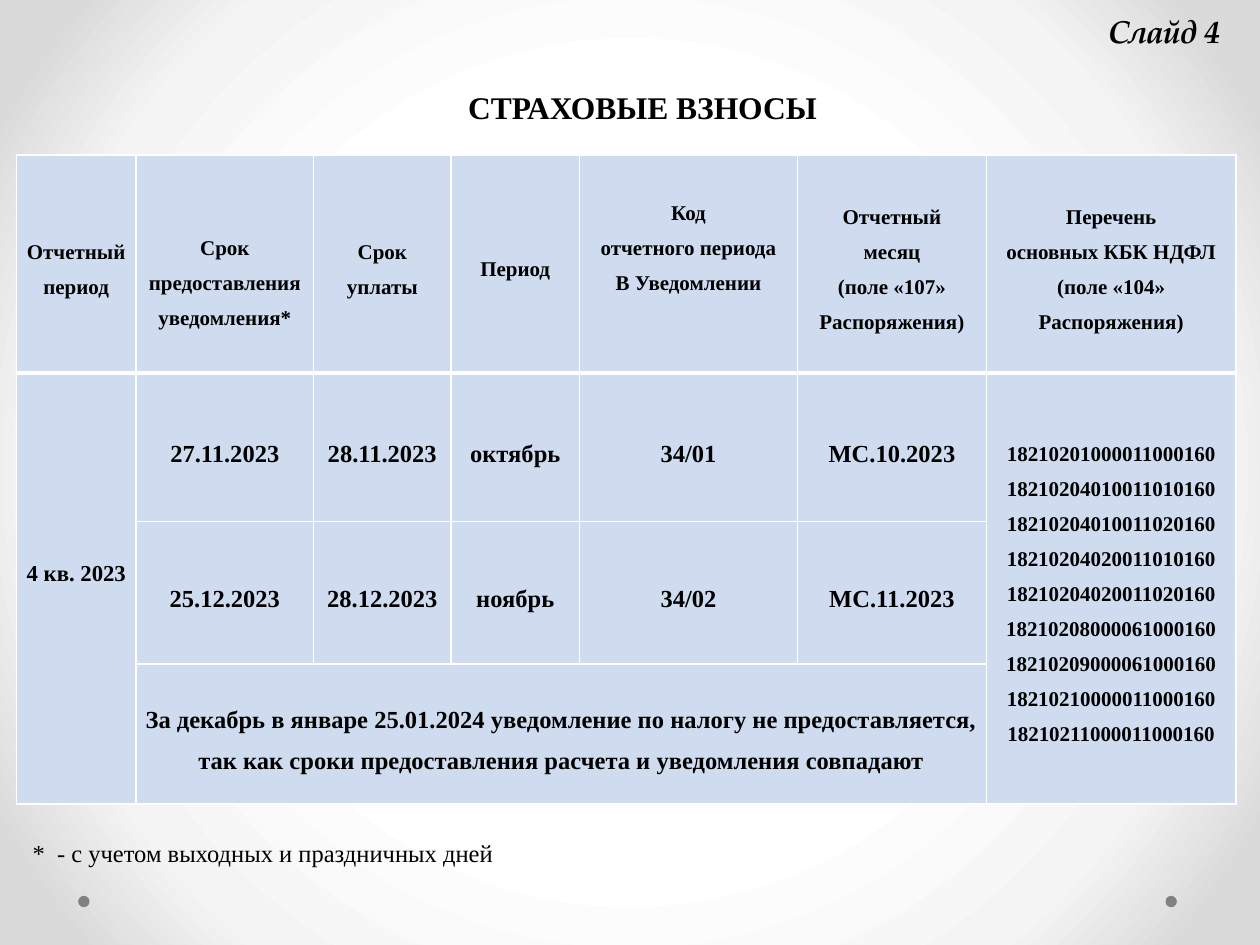
import lxml.etree
import pptx
import pptx.dml.color
import pptx.enum.shapes
import pptx.enum.text
import pptx.oxml
import pptx.oxml.ns
import pptx.util

Inches = pptx.util.Inches
Pt = pptx.util.Pt
RGB = pptx.dml.color.RGBColor
Align = pptx.enum.text.PP_ALIGN
Anchor = pptx.enum.text.MSO_ANCHOR
qn = pptx.oxml.ns.qn

BLACK = RGB(0x00, 0x00, 0x00)
WHITE = RGB(0xFF, 0xFF, 0xFF)
PALE = RGB(0xF4, 0xF4, 0xF4)
SILVER = RGB(0xDA, 0xDA, 0xDA)
GRAY = RGB(0x80, 0x80, 0x80)
BLUE = RGB(0xCF, 0xDC, 0xF0)

SERIF = "Times New Roman"
SCRIPT = "TeX Gyre Pagella"
LINE = 0.28

COLS = [0.95, 1.41, 1.09, 1.02, 1.73, 1.5, 1.98]
ROWS = [1.73, 1.18, 1.13, 1.11]
HEADS = [
    ["Отчетный", "период"],
    ["Срок предоставления уведомления*"],
    ["Срок", "уплаты"],
    ["Период"],
    ["Код", "отчетного периода", "В Уведомлении"],
    ["Отчетный", "месяц", "(поле «107»", "Распоряжения)"],
    ["Перечень", "основных КБК НДФЛ", "(поле «104»", "Распоряжения)"],
]
TOPS = {1: 2 * LINE, 4: LINE}
DATES = [
    ["27.11.2023", "28.11.2023", "октябрь", "34/01", "МС.10.2023"],
    ["25.12.2023", "28.12.2023", "ноябрь", "34/02", "МС.11.2023"],
]
CODES = [
    "18210201000011000160",
    "18210204010011010160",
    "18210204010011020160",
    "18210204020011010160",
    "18210204020011020160",
    "18210208000061000160",
    "18210209000061000160",
    "18210210000011000160",
    "18210211000011000160",
]
NOTE = [
    "За декабрь в январе 25.01.2024 уведомление по налогу не предоставляется,",
    "так как сроки предоставления расчета и уведомления совпадают",
]


class Deck:
    """Holds the style and the current slide and draws each kind of element."""

    def __init__(self):
        self.prs = pptx.Presentation()
        self.prs.slide_width = Inches(10)
        self.prs.slide_height = Inches(7.5)
        self.slide = self.prs.slides.add_slide(self.prs.slide_layouts[6])
        self.shapes = self.slide.shapes

    def glow(self, stops):
        self.slide.background.fill.gradient()
        grad = self.slide.element.find(".//" + qn("a:gradFill"))
        for child in list(grad):
            grad.remove(child)
        marks = "".join(
            f'<a:gs pos="{pos * 1000}"><a:srgbClr val="{color}"/></a:gs>'
            for pos, color in stops
        )
        space = pptx.oxml.ns.nsdecls("a")
        grad.append(pptx.oxml.parse_xml(f"<a:gsLst {space}>{marks}</a:gsLst>"))
        grad.append(pptx.oxml.parse_xml(
            f'<a:path {space} path="circle"><a:fillToRect l="50000" t="50000" '
            'r="50000" b="50000"/></a:path>'))

    def dot(self, left, top):
        dot = self.shapes.add_shape(
            pptx.enum.shapes.MSO_SHAPE.OVAL,
            Inches(left), Inches(top), Inches(0.09), Inches(0.09))
        dot.shadow.inherit = False
        dot.fill.solid()
        dot.fill.fore_color.rgb = GRAY
        dot.line.fill.background()

    def style(self, para, size, face=SERIF, bold=True, slant=False):
        font = para.font
        font.name = face
        font.size = Pt(size)
        font.bold = bold
        font.italic = slant
        font.color.rgb = BLACK

    def text(self, box, words, size, align=Align.LEFT, wrap=False, **looks):
        frame = self.shapes.add_textbox(*map(Inches, box)).text_frame
        frame.word_wrap = wrap
        frame.auto_size = pptx.enum.text.MSO_AUTO_SIZE.SHAPE_TO_FIT_TEXT
        para = frame.paragraphs[0]
        para.text = words
        para.alignment = align
        self.style(para, size, **looks)

    def table(self, left, top, cols, rows):
        grid = self.shapes.add_table(
            len(rows), len(cols), Inches(left), Inches(top),
            Inches(sum(cols)), Inches(sum(rows))).table
        for col, width in zip(grid.columns, cols):
            col.width = Inches(width)
        for row, height in zip(grid.rows, rows):
            row.height = Inches(height)
        for y in range(len(rows)):
            for x in range(len(cols)):
                cell = grid.cell(y, x)
                self.edge(cell, top=3 if y == 1 else 1, base=3 if y == 0 else 1)
                cell.fill.solid()
                cell.fill.fore_color.rgb = BLUE
        return grid

    def edge(self, cell, top, base):
        props = cell._tc.get_or_add_tcPr()
        for tag, width in (("lnL", 1), ("lnR", 1), ("lnT", top), ("lnB", base)):
            line = lxml.etree.SubElement(props, qn("a:" + tag), w=str(Pt(width)))
            fill = lxml.etree.SubElement(line, qn("a:solidFill"))
            lxml.etree.SubElement(fill, qn("a:srgbClr"), val=str(WHITE))

    def cell(self, cell, lines, size, top=0, base=0):
        cell.margin_left = cell.margin_right = Inches(0.06)
        cell.margin_top = Inches(top)
        cell.margin_bottom = Inches(base)
        cell.vertical_anchor = Anchor.TOP if top else Anchor.MIDDLE
        cell.text = "\n".join(lines)
        for para in cell.text_frame.paragraphs:
            para.alignment = Align.CENTER
            para.line_spacing = 1.5
            self.style(para, size)


def main():
    deck = Deck()
    deck.glow([(50, WHITE), (76, PALE), (92, SILVER)])
    for left in (9.25, 0.62):
        deck.dot(left, 7.11)

    grid = deck.table(0.13, 1.23, COLS, ROWS)
    for x, lines in enumerate(HEADS):
        deck.cell(grid.cell(0, x), lines, 12, top=TOPS.get(x, 0))
    for x in (0, 6):
        grid.cell(1, x).merge(grid.cell(3, x))
    grid.cell(3, 1).merge(grid.cell(3, 5))
    deck.cell(grid.cell(1, 0), ["4 кв. 2023"], 13, base=0.33)
    deck.cell(grid.cell(1, 6), CODES, 12)
    for y, row in enumerate(DATES, 1):
        for x, word in enumerate(row, 1):
            deck.cell(grid.cell(y, x), [word], 14)
    deck.cell(grid.cell(3, 1), NOTE, 14)

    deck.text((0.16, 6.6, 3.95, 0.34),
              "*  - с учетом выходных и праздничных дней", 14, bold=False)
    deck.text((1.87, 0.65, 6.46, 0.4), "СТРАХОВЫЕ ВЗНОСЫ", 18,
              align=Align.CENTER, wrap=True)
    deck.text((8.7, 0.05, 1.17, 0.4), "Слайд 4", 18, face=SCRIPT, slant=True)
    deck.prs.save("out.pptx")


if __name__ == "__main__":
    main()
